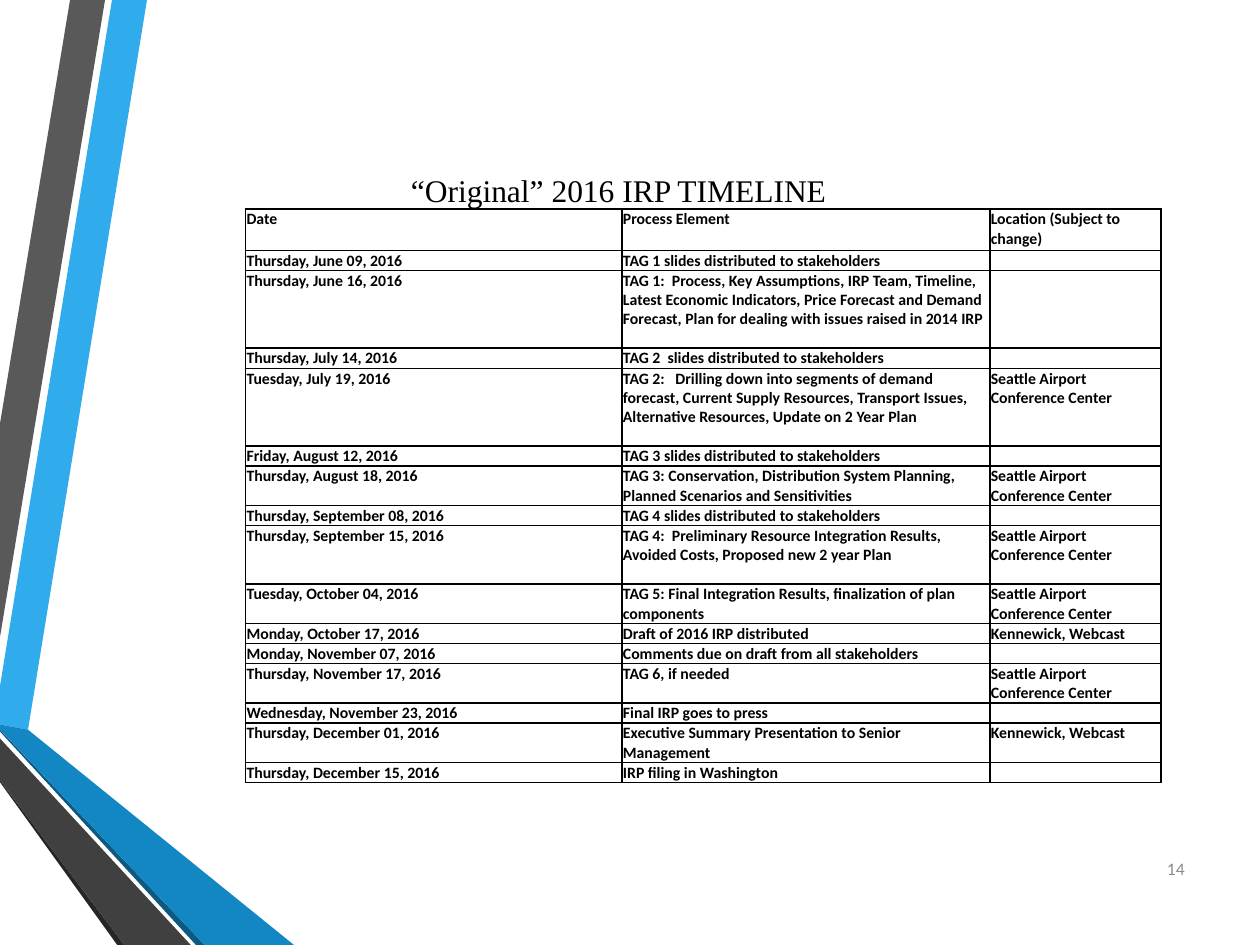
from lxml import etree
from pptx import Presentation
from pptx.dml.color import RGBColor
from pptx.enum.text import MSO_ANCHOR, MSO_AUTO_SIZE, PP_ALIGN
from pptx.oxml.ns import qn
from pptx.util import Pt

TOP, MIDDLE = MSO_ANCHOR.TOP, MSO_ANCHOR.MIDDLE
LEFT, CENTER, RIGHT = PP_ALIGN.LEFT, PP_ALIGN.CENTER, PP_ALIGN.RIGHT
NO_AUTOFIT = MSO_AUTO_SIZE.NONE

BLACK = RGBColor(0x00, 0x00, 0x00)
PAGE_GRAY = RGBColor(0x8C, 0x8C, 0x8C)
SKY_BLUE = RGBColor(0x30, 0xAC, 0xEC)
MID_BLUE = RGBColor(0x12, 0x87, 0xC3)
DEEP_BLUE = RGBColor(0x0C, 0x5A, 0x82)
GRAY = RGBColor(0x59, 0x59, 0x59)
DARK_GRAY = RGBColor(0x40, 0x40, 0x40)
CHARCOAL = RGBColor(0x26, 0x26, 0x26)

RIBBONS = [
    (SKY_BLUE, [(0, 391.7), (0, 414), (15.8, 416.9), (84.5, 0), (64.1, 0)]),
    (GRAY, [(59.8, 0), (39.6, 0), (0, 241.9), (0, 364.3)]),
    (CHARCOAL, [(0, 445.7), (0, 447.1), (67, 540), (71.3, 540)]),
    (DEEP_BLUE, [(0, 416.9), (0, 417.6), (112.3, 540), (117.4, 540)]),
    (MID_BLUE, [(0, 416.9), (117.4, 540), (167.8, 540), (15.8, 416.9), (0, 414)]),
    (DARK_GRAY, [(0, 445.7), (71.3, 540), (108.7, 540), (0, 421.9)]),
]

AIRPORT = "Seattle Airport Conference Center"
ONLINE = "Kennewick, Webcast"
COLUMN_WIDTHS = [215.1, 210.2, 97.9]
HEADER = ["Date", "Process Element", "Location (Subject to change)"]
HEADER_HEIGHT = 23.5
LINE_HEIGHT = 11
ROW_PADDING = 0.5
TIMELINE = [
    (1, "Thursday, June 09, 2016", "TAG 1 slides distributed to stakeholders", ""),
    (4, "Thursday, June 16, 2016",
     "TAG 1:  Process, Key Assumptions, IRP Team, Timeline, Latest Economic Indicators, "
     "Price Forecast and Demand Forecast, Plan for dealing with issues raised in 2014 IRP", ""),
    (1, "Thursday, July 14, 2016", "TAG 2  slides distributed to stakeholders", ""),
    (4, "Tuesday, July 19, 2016",
     "TAG 2:   Drilling down into segments of demand forecast, Current Supply Resources, "
     "Transport Issues, Alternative Resources, Update on 2 Year Plan", AIRPORT),
    (1, "Friday, August 12, 2016", "TAG 3 slides distributed to stakeholders", ""),
    (2, "Thursday, August 18, 2016",
     "TAG 3: Conservation, Distribution System Planning, Planned Scenarios and Sensitivities",
     AIRPORT),
    (1, "Thursday, September 08, 2016", "TAG 4 slides distributed to stakeholders", ""),
    (3, "Thursday, September 15, 2016",
     "TAG 4:  Preliminary Resource Integration Results, Avoided Costs, Proposed new 2 year Plan",
     AIRPORT),
    (2, "Tuesday, October 04, 2016",
     "TAG 5: Final Integration Results, finalization of plan components", AIRPORT),
    (1, "Monday, October 17, 2016", "Draft of 2016 IRP distributed", ONLINE),
    (1, "Monday, November 07, 2016", "Comments due on draft from all stakeholders", ""),
    (2, "Thursday, November 17, 2016", "TAG 6, if needed", AIRPORT),
    (1, "Wednesday, November 23, 2016", "Final IRP goes to press", ""),
    (2, "Thursday, December 01, 2016", "Executive Summary Presentation to Senior Management", ONLINE),
    (1, "Thursday, December 15, 2016", "IRP filing in Washington", ""),
]


def write_text(frame, text, *, size, color=BLACK, font="Calibri", bold=False, align=LEFT):
    paragraph = frame.paragraphs[0]
    paragraph.alignment = align
    if not text:
        paragraph._p.get_or_add_endParaRPr().set("sz", str(size * 100))
        return
    run = paragraph.add_run()
    run.text = text
    run.font.size = Pt(size)
    run.font.name = font
    run.font.bold = bold
    run.font.color.rgb = color


def place(shape, left, top, width, height):
    shape.left, shape.top = Pt(left), Pt(top)
    shape.width, shape.height = Pt(width), Pt(height)


def add_ribbon(slide, color, points):
    builder = slide.shapes.build_freeform(*points[0], scale=Pt(1))
    builder.add_line_segments(points[1:], close=True)
    shape = builder.convert_to_shape()
    shape.shadow.inherit = False
    shape.fill.solid()
    shape.fill.fore_color.rgb = color
    shape.line.fill.background()


def add_title(slide, text):
    title = slide.shapes.title
    place(title, 121.7, 94.3, 463.7, 29)
    frame = title.text_frame
    frame.word_wrap = True
    frame.auto_size = NO_AUTOFIT
    frame.vertical_anchor = TOP
    write_text(frame, text, size=18, font="Times New Roman", align=CENTER)


def add_page_number(slide, text):
    box = slide.shapes.add_textbox(Pt(651.6), Pt(481.7), Pt(32.4), Pt(28.8))
    box.text_frame.word_wrap = True
    box.text_frame.vertical_anchor = MIDDLE
    write_text(box.text_frame, text, size=10, color=PAGE_GRAY, align=RIGHT)


def add_borders(cell, color, width):
    properties = cell._tc.get_or_add_tcPr()
    for side in ("lnL", "lnR", "lnT", "lnB"):
        line = etree.SubElement(properties, qn(f"a:{side}"), w=str(Pt(width)))
        fill = etree.SubElement(line, qn("a:solidFill"))
        etree.SubElement(fill, qn("a:srgbClr"), val=str(color))


def fill_cell(cell, text):
    cell.margin_left = cell.margin_right = cell.margin_top = Pt(0.5)
    cell.margin_bottom = Pt(0)
    cell.vertical_anchor = TOP
    add_borders(cell, BLACK, 1)
    cell.fill.background()
    write_text(cell.text_frame, text, size=9, bold=True)


def add_timeline(slide):
    rows = [HEADER] + [texts for _, *texts in TIMELINE]
    heights = [HEADER_HEIGHT] + [lines * LINE_HEIGHT + ROW_PADDING for lines, *_ in TIMELINE]
    frame = slide.shapes.add_table(len(rows), len(HEADER), Pt(140.4), Pt(119.5),
                                   Pt(sum(COLUMN_WIDTHS)), Pt(sum(heights)))
    table = frame.table
    table.first_row = False
    table.horz_banding = False
    for column, width in zip(table.columns, COLUMN_WIDTHS):
        column.width = Pt(width)
    for row, height, texts in zip(table.rows, heights, rows):
        row.height = Pt(height)
        for cell, text in zip(row.cells, texts):
            fill_cell(cell, text)


def main():
    presentation = Presentation()
    presentation.slide_width, presentation.slide_height = Pt(720), Pt(540)
    slide = presentation.slides.add_slide(presentation.slide_layouts[5])
    for color, points in RIBBONS:
        add_ribbon(slide, color, points)
    add_page_number(slide, "14")
    add_title(slide, "“Original” 2016 IRP TIMELINE")
    add_timeline(slide)
    presentation.save("out.pptx")


if __name__ == "__main__":
    main()
